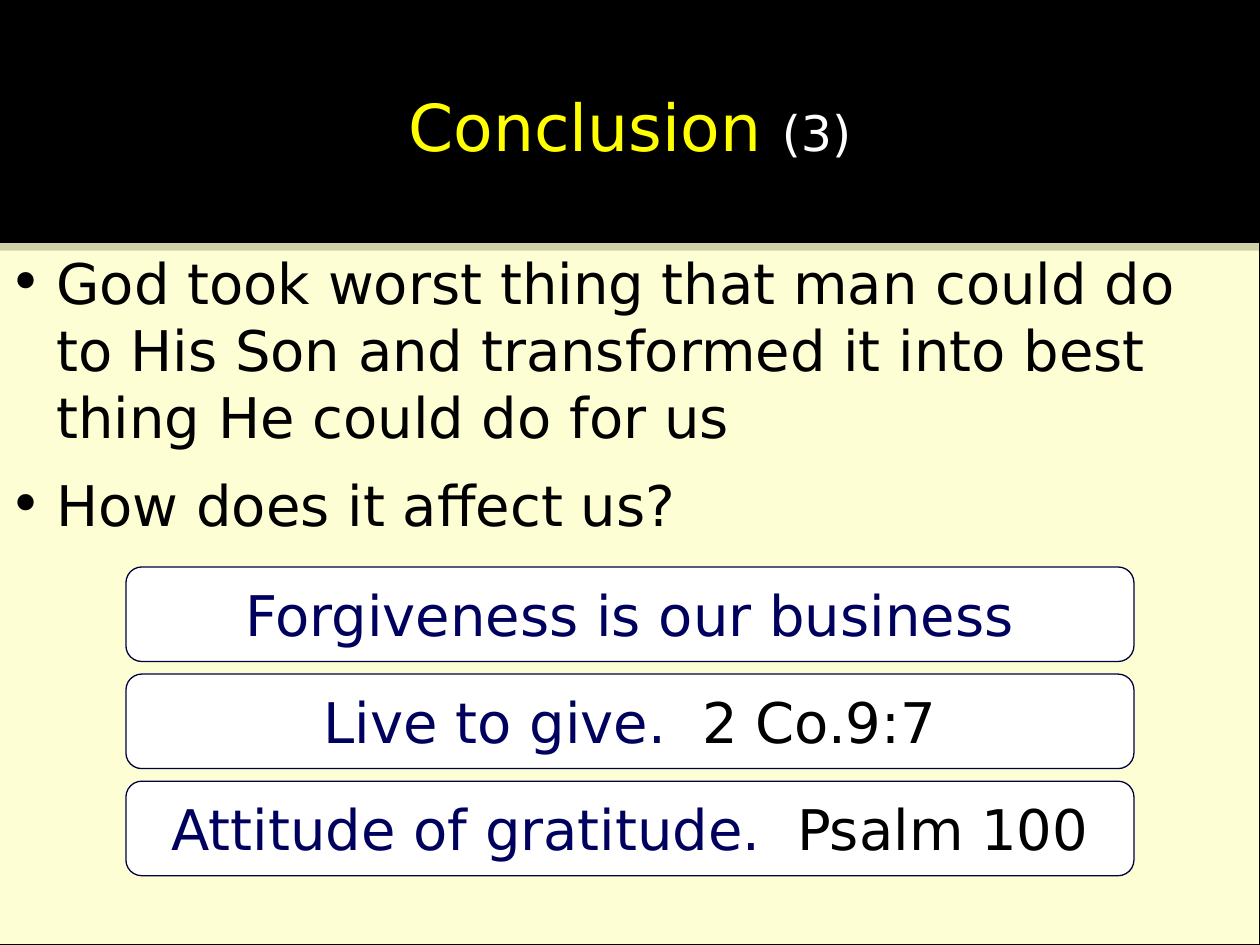
"""Build the "Conclusion (3)" slide with two points and three boxed answers."""
from lxml.etree import SubElement
from pptx import Presentation
from pptx.dml.color import RGBColor
from pptx.enum.shapes import MSO_SHAPE
from pptx.enum.text import MSO_ANCHOR, PP_ALIGN
from pptx.oxml.ns import qn
from pptx.util import Inches, Pt

COLORS = {
    "paper": "FDFDFD", "black": "000000", "yellow": "FFFF00", "white": "FFFFFF",
    "cream": "FFFFCC", "navy": "00005E", "outline": "00003E",
}
POINTS = [
    "God took worst thing that man could do to His Son and transformed it into best thing He could do for us",
    "How does it affect us?",
]
ANSWERS = [
    [("Forgiveness is our business", "navy")],
    [("Live to give.  ", "navy"), ("2 Co.9:7", "black")],
    [("Attitude of gratitude.  ", "navy"), ("Psalm 100", "black")],
]


def rgb(name):
    return RGBColor.from_string(COLORS[name])


def add_run(paragraph, text, color, size=32):
    run = paragraph.add_run()
    run.text = text
    for key, value in {"name": "DejaVu Sans", "size": Pt(size), "bold": False}.items():
        setattr(run.font, key, value)
    run.font.color.rgb = rgb(color)


prs = Presentation()
prs.slide_width, prs.slide_height = Inches(10), Inches(7.5)
slide = prs.slides.add_slide(prs.slide_layouts[5])
slide.background.fill.solid()
slide.background.fill.fore_color.rgb = rgb("paper")

heading = slide.shapes.title
banner = {"left": 0, "top": 0, "width": Inches(10), "height": Inches(1.99)}
for key, value in banner.items():
    setattr(heading, key, value)
heading.fill.solid()
heading.fill.fore_color.rgb = rgb("black")
heading.text_frame.vertical_anchor = MSO_ANCHOR.MIDDLE
heading_line = heading.text_frame.paragraphs[0]
heading_line.alignment = PP_ALIGN.CENTER
add_run(heading_line, "Conclusion ", "yellow", 37)
add_run(heading_line, "(3)", "white", 28)

points = slide.shapes.add_shape(
    MSO_SHAPE.RECTANGLE, Inches(-0.02), Inches(1.92), Inches(10.02), Inches(5.58))
points.shadow.inherit = False
points.fill.solid()
points.fill.fore_color.rgb = rgb("cream")
cream = points.fill._xPr.find(qn("a:solidFill"))[0]
SubElement(cream, qn("a:alpha"), val="82000")
points.line.color.rgb = rgb("black")
points.line.width = Pt(0.75)
points.text_frame.word_wrap = True
points.text_frame.vertical_anchor = MSO_ANCHOR.TOP
for index, text in enumerate(POINTS):
    point = points.text_frame.add_paragraph() if index else points.text_frame.paragraphs[0]
    point.alignment = PP_ALIGN.LEFT
    point.space_after = Pt(12)
    add_run(point, text, "black")
    properties = point._p.get_or_add_pPr()
    properties.set("marL", str(Inches(0.37)))
    properties.set("indent", str(Inches(-0.37)))
    SubElement(properties, qn("a:buFont"), typeface="DejaVu Sans")
    SubElement(properties, qn("a:buChar"), char="•")

for row, parts in enumerate(ANSWERS):
    answer = slide.shapes.add_shape(
        MSO_SHAPE.ROUNDED_RECTANGLE, Inches(1), Inches(4.5 + 0.85 * row), Inches(8), Inches(0.75))
    answer.shadow.inherit = False
    answer.fill.solid()
    answer.fill.fore_color.rgb = rgb("white")
    answer.line.color.rgb = rgb("outline")
    answer.line.width = Pt(0.75)
    answer.text_frame.word_wrap = True
    answer.text_frame.vertical_anchor = MSO_ANCHOR.MIDDLE
    answer_line = answer.text_frame.paragraphs[0]
    answer_line.alignment = PP_ALIGN.CENTER
    for text, color in parts:
        add_run(answer_line, text, color)

prs.save("out.pptx")
